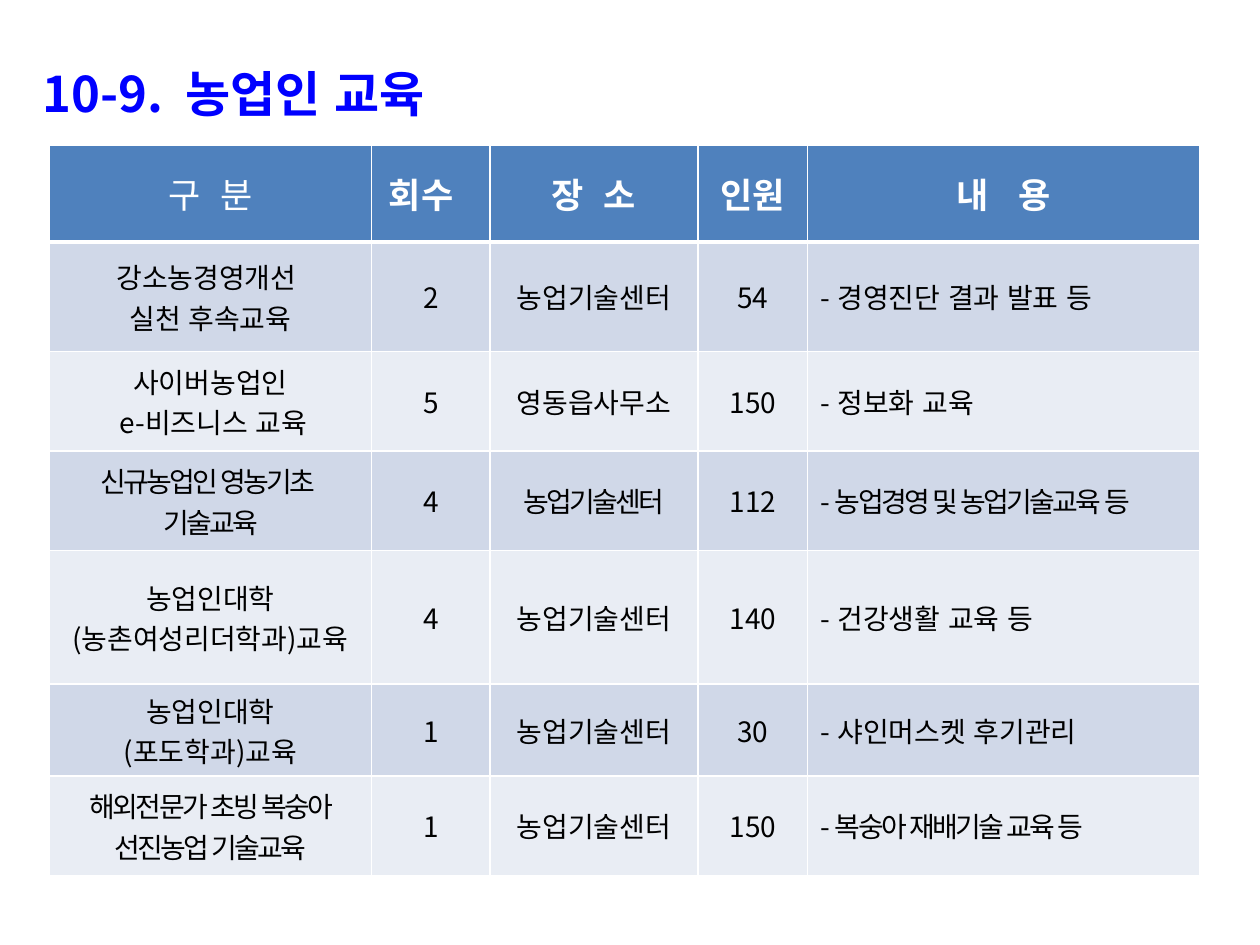
from lxml import etree
from pptx import Presentation
from pptx.dml.color import RGBColor
from pptx.enum.lang import MSO_LANGUAGE_ID
from pptx.enum.text import MSO_ANCHOR, PP_ALIGN
from pptx.oxml.ns import qn
from pptx.util import Inches, Pt

CENTER, LEFT = PP_ALIGN.CENTER, PP_ALIGN.LEFT
MIDDLE = MSO_ANCHOR.MIDDLE
KOREAN = MSO_LANGUAGE_ID.KOREAN
FONT = "Noto Sans CJK KR"
COLORS = {
    "title": "0000FF",
    "header": "4F81BD",
    "band_dark": "D0D8E8",
    "band_light": "E9EDF4",
    "white": "FFFFFF",
    "text": "000000",
}

COLUMN_WIDTHS = [2.56, 0.94, 1.65, 0.87, 3.11]
# The fifth row is taller because its first cell wraps to three lines.
ROW_HEIGHTS = [0.77, 0.87, 0.79, 0.79, 1.06, 0.73, 0.79]
CENTER_PLACE = "농업기술센터"
ROWS = [
    ["구  분", "회수  ", "장  소", "인원", "내   용"],
    ["강소농경영개선 \n실천 후속교육", "2", CENTER_PLACE, "54", " 경영진단 결과 발표 등"],
    ["사이버농업인\n e-비즈니스 교육", "5", "영동읍사무소", "150", " 정보화 교육"],
    ["신규농업인 영농기초 \n기술교육", "4", CENTER_PLACE, "112", " 농업경영 및 농업기술교육 등"],
    ["농업인대학\n(농촌여성리더학과)교육", "4", CENTER_PLACE, "140", " 건강생활 교육 등"],
    ["농업인대학\n(포도학과)교육", "1", CENTER_PLACE, "30", " 샤인머스켓 후기관리"],
    ["해외전문가 초빙 복숭아 선진농업 기술교육", "1", CENTER_PLACE, "150", " 복숭아 재배기술 교육 등"],
]
CONDENSED_CELLS = {(3, 0), (3, 2), (3, 4), (6, 0), (6, 4)}


class PageBuilder:
    """Holds the shared text and border style and the slide being filled."""

    def __init__(self, page):
        self.page = page

    def style_text(self, frame, size, color, bold=False, align=LEFT, spacing=0):
        for para in frame.paragraphs:
            para.alignment = align
            for span in para.runs:
                font = span.font
                font.name, font.size, font.bold = FONT, Pt(size), bold
                font.color.rgb = RGBColor.from_string(COLORS[color])
                font.language_id = KOREAN
                properties = span._r.get_or_add_rPr()
                etree.SubElement(properties, qn("a:ea"), typeface=FONT)
                if spacing:
                    properties.set("spc", str(int(spacing * 100)))

    def add_title(self, text, left, top, width, height):
        box = self.page.shapes.add_textbox(
            Inches(left), Inches(top), Inches(width), Inches(height))
        frame = box.text_frame
        frame.word_wrap = False
        frame.text = text
        para = frame.paragraphs[0]
        para.line_spacing = 1.2
        properties = para._p.get_or_add_pPr()
        properties.set("marL", str(Inches(0.58)))
        properties.set("indent", str(Inches(-0.58)))
        self.style_text(frame, 28, "title", bold=True)

    def set_borders(self, cell, top, bottom):
        """Draw white cell edges; must run before the cell fill is set."""
        properties = cell._tc.get_or_add_tcPr()
        for side, width in (("L", 1), ("R", 1), ("T", top), ("B", bottom)):
            line = etree.SubElement(properties, qn(f"a:ln{side}"), w=str(Pt(width)))
            fill = etree.SubElement(line, qn("a:solidFill"))
            etree.SubElement(fill, qn("a:srgbClr"), val=COLORS["white"])

    def fill_cell(self, cell, text, row, column):
        is_header = row == 0
        is_bullet = not is_header and column == len(COLUMN_WIDTHS) - 1
        self.set_borders(cell, top=3 if row == 1 else 1, bottom=3 if is_header else 1)
        background = "header" if is_header else "band_dark" if row % 2 else "band_light"
        cell.fill.solid()
        cell.fill.fore_color.rgb = RGBColor.from_string(COLORS[background])
        cell.vertical_anchor = MIDDLE
        cell.text_frame.text = text
        self.style_text(
            cell.text_frame,
            size=20 if is_header else 16,
            color="white" if is_header else "text",
            bold=is_header and column > 0,
            align=LEFT if is_bullet else CENTER,
            spacing=-1.5 if (row, column) in CONDENSED_CELLS else 0,
        )
        if is_bullet:
            properties = cell.text_frame.paragraphs[0]._p.get_or_add_pPr()
            etree.SubElement(properties, qn("a:buFont"), typeface=FONT)
            etree.SubElement(properties, qn("a:buChar"), char="-")

    def add_table(self, rows, left, top):
        frame = self.page.shapes.add_table(
            len(rows), len(COLUMN_WIDTHS), Inches(left), Inches(top),
            Inches(sum(COLUMN_WIDTHS)), Inches(sum(ROW_HEIGHTS)))
        table = frame.table
        for column, width in zip(table.columns, COLUMN_WIDTHS):
            column.width = Inches(width)
        for row, height in zip(table.rows, ROW_HEIGHTS):
            row.height = Inches(height)
        for row, texts in enumerate(rows):
            for column, text in enumerate(texts):
                self.fill_cell(table.cell(row, column), text, row, column)


def main():
    deck = Presentation()
    deck.slide_width, deck.slide_height = Inches(10), Inches(7.5)
    builder = PageBuilder(deck.slides.add_slide(deck.slide_layouts[6]))
    builder.add_title("10-9.  농업인 교육", 0.24, 0.36, 9.45, 0.57)
    builder.add_table(ROWS, 0.39, 1.15)
    deck.save("out.pptx")


if __name__ == "__main__":
    main()
